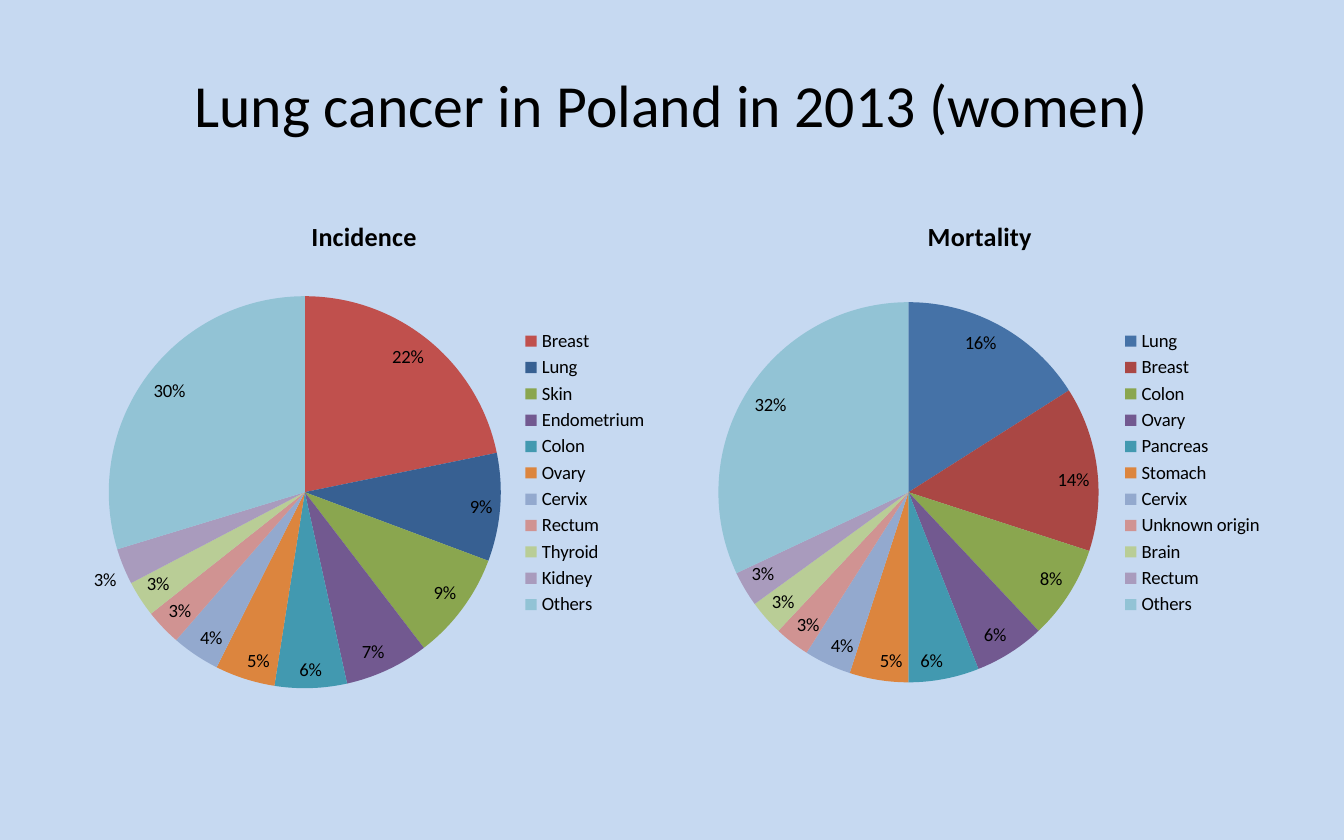
from lxml.etree import SubElement
from pptx import Presentation
from pptx.chart.data import CategoryChartData as ChartData
from pptx.dml.color import RGBColor as RGB
from pptx.enum.chart import XL_CHART_TYPE as Kind, XL_LABEL_POSITION as Place, XL_LEGEND_POSITION as Side
from pptx.enum.text import MSO_ANCHOR as Anchor, PP_ALIGN as Align
from pptx.oxml.ns import qn
from pptx.util import Inches, Pt

COLORS = {"background": "C6D9F1", "ink": "000000"}
SHADES = ["4572A7", "AA4744", "8AA64F", "725990", "4299B0", "DC853E",
          "93A9CE", "D09392", "B9CD96", "A99BBD", "92C3D5"]
INCIDENCE = {"Breast": 22, "Lung": 9, "Skin": 9, "Endometrium": 7, "Colon": 6, "Ovary": 5,
             "Cervix": 4, "Rectum": 3, "Thyroid": 3, "Kidney": 3, "Others": 30}
MORTALITY = {"Lung": 16, "Breast": 14, "Colon": 8, "Ovary": 6, "Pancreas": 6, "Stomach": 5,
             "Cervix": 4, "Unknown origin": 3, "Brain": 3, "Rectum": 3, "Others": 32}


class Deck:
    """Hold the style and the current slide, with lengths as shares of its size."""

    font_name = "Calibri"

    def __init__(self, width, height):
        self.show = Presentation()
        self.show.slide_width, self.show.slide_height = Inches(width), Inches(height)
        self.slide = self.show.slides.add_slide(self.show.slide_layouts[5])
        fill = self.slide.background.fill
        fill.solid()
        fill.fore_color.rgb = RGB.from_string(COLORS["background"])

    def box(self, left, top, width, height):
        across, down = self.show.slide_width, self.show.slide_height
        return int(left * across), int(top * down), int(width * across), int(height * down)

    def style(self, font, size, bold=False):
        font.name, font.size, font.bold = self.font_name, Pt(size), bold
        font.color.rgb = RGB.from_string(COLORS["ink"])

    def title(self, text, area):
        heading = self.slide.shapes.title
        heading.left, heading.top, heading.width, heading.height = self.box(*area)
        heading.text_frame.text = text
        heading.text_frame.vertical_anchor = Anchor.MIDDLE
        line = heading.text_frame.paragraphs[0]
        line.alignment = Align.CENTER
        self.style(line.runs[0].font, 32)

    def place(self, parent, inner=False, **shares):
        for old in parent.findall(qn("c:layout")):
            parent.remove(old)
        manual = SubElement(SubElement(parent, qn("c:layout")), qn("c:manualLayout"))
        if inner:
            SubElement(manual, qn("c:layoutTarget")).set("val", "inner")
        for axis in "xy":
            SubElement(manual, qn(f"c:{axis}Mode")).set("val", "edge")
        for key, share in shares.items():
            SubElement(manual, qn(f"c:{key}")).set("val", str(share))
        return manual.getparent()

    def pie(self, caption, cases, shades, area, plot_area, outside=()):
        data = ChartData()
        data.categories = list(cases)
        data.add_series("Series 1", list(cases.values()))
        chart = self.slide.shapes.add_chart(Kind.PIE, *self.box(*area), data).chart
        self.style(chart.font, 10)

        chart.has_title = True
        chart.chart_title.text_frame.text = caption
        self.style(chart.chart_title.text_frame.paragraphs[0].runs[0].font, 14, True)
        chart.chart_title.include_in_layout = False

        chart.has_legend = True
        chart.legend.position = Side.RIGHT
        chart.legend.include_in_layout = False
        self.style(chart.legend.font, 10)

        plot = chart.plots[0]
        plot.vary_by_categories = True
        series = plot.series[0]
        for point, shade in zip(series.points, shades):
            point.format.fill.solid()
            point.format.fill.fore_color.rgb = RGB.from_string(shade)
            point.format.line.fill.background()

        labels = series.data_labels
        labels.show_percentage, labels.show_value = True, False
        labels.number_format, labels.number_format_is_linked = "0%", False
        labels.position = Place.INSIDE_END
        self.style(labels.font, 10)
        for name in outside:
            label = series.points[list(cases).index(name)].data_label
            label.position = Place.OUTSIDE_END
            flags = label._get_or_add_dLbl()
            flags.find(qn("c:showVal")).set("val", "0")
            flags.find(qn("c:showPercent")).set("val", "1")

        canvas = chart.plots[0]._element.getparent()
        canvas.insert(0, self.place(canvas, True, **dict(zip("xywh", plot_area))))


def main():
    deck = Deck(10, 6.25)
    margin, top, width, height = 0.05, 0.233, 0.442, 0.66
    deck.title("Lung cancer in Poland in 2013 (women)", (margin, 0.04, 1 - 2 * margin, 0.167))
    deck.pie("Incidence", INCIDENCE, ["C0504D", "376092"] + SHADES[2:],
             (margin, top, width, height), (0.07, 0.18, 0.66, 0.71), outside=["Kidney"])
    deck.pie("Mortality", MORTALITY, SHADES,
             (1 - margin - width, top, width, height), (0.06, 0.19, 0.64, 0.69))
    deck.show.save("out.pptx")


if __name__ == "__main__":
    main()
